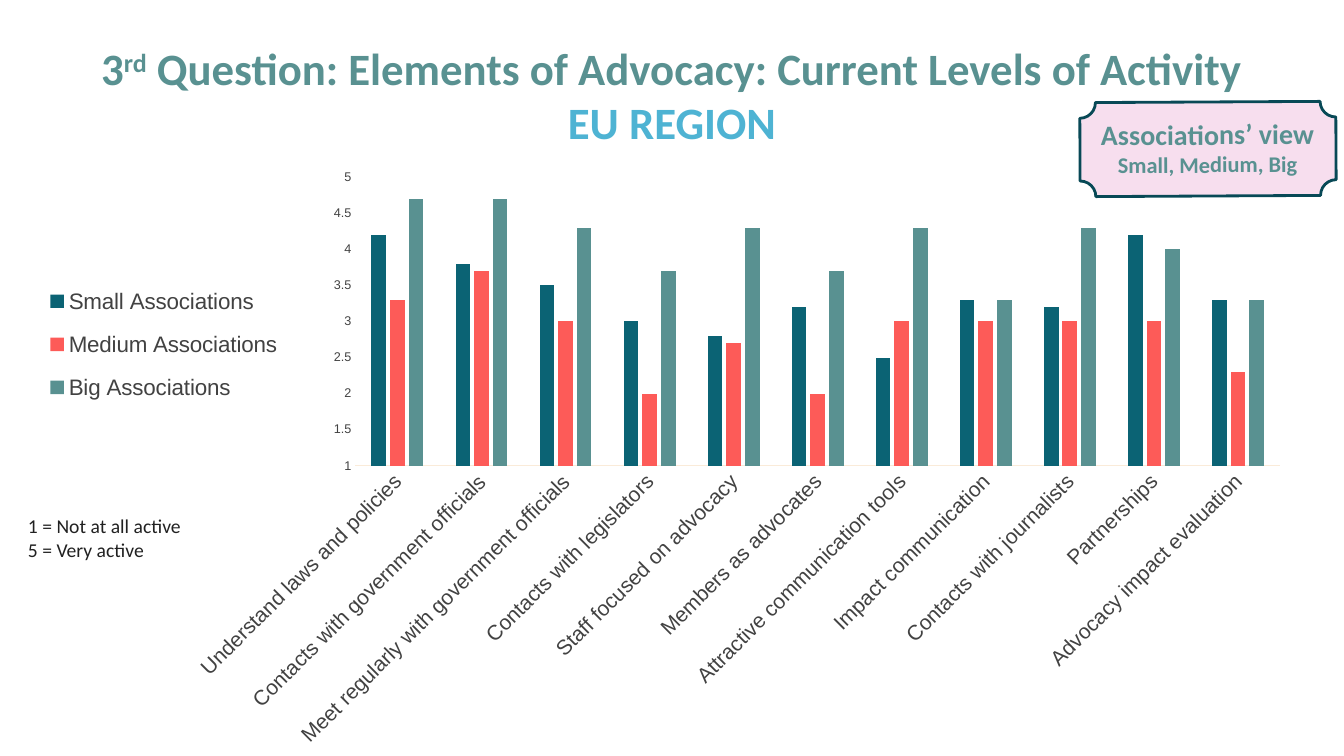
import pptx
import pptx.chart.data
import pptx.dml.color
import pptx.enum.chart
import pptx.enum.shapes
import pptx.enum.text
import pptx.oxml
import pptx.oxml.ns
import pptx.util

RGB = pptx.dml.color.RGBColor
TEAL = RGB(0x59, 0x91, 0x91)
BLUE = RGB(0x4E, 0xB3, 0xD3)
DARK = RGB(0x08, 0x49, 0x56)
PINK = RGB(0xF7, 0xDE, 0xEE)
INK = RGB(0x21, 0x21, 0x21)
GREY = RGB(0x42, 0x42, 0x42)
SAND = RGB(0xFA, 0xEB, 0xD9)
DEEP = RGB(0x0B, 0x63, 0x74)
CORAL = RGB(0xFD, 0x5B, 0x58)

# Content: each line is a list of runs (text, format)
HEAD = {"name": "Calibri", "size": 32, "bold": True, "color": TEAL}
NOTE = {"name": "Calibri", "size": 14, "color": INK}
BADGE = {"name": "Calibri", "size": 20, "bold": True, "color": TEAL}
TITLE = [
    [("3", HEAD), ("rd", HEAD | {"raise": 30000}),
     (" Question: Elements of Advocacy: Current Levels of Activity", HEAD)],
    [("EU REGION", HEAD | {"color": BLUE})],
]
VIEW = [[("Associations’ view", BADGE)],
        [("Small, Medium, Big", BADGE | {"size": 16})]]
KEY = [[("1 = Not at all active", NOTE)], [("5 = Very active", NOTE)]]

ROWS = [
    ("Understand laws and policies", 4.2, 3.3, 4.7),
    ("Contacts with government officials", 3.8, 3.7, 4.7),
    ("Meet regularly with government officials", 3.5, 3, 4.3),
    ("Contacts with legislators", 3, 2, 3.7),
    ("Staff focused on advocacy", 2.8, 2.7, 4.3),
    ("Members as advocates", 3.2, 2, 3.7),
    ("Attractive communication tools", 2.5, 3, 4.3),
    ("Impact communication", 3.3, 3, 3.3),
    ("Contacts with journalists", 3.2, 3, 4.3),
    ("Partnerships", 4.2, 3, 4),
    ("Advocacy impact evaluation", 3.3, 2.3, 3.3),
]
GROUPS = [("Small Associations", DEEP), ("Medium Associations", CORAL),
          ("Big Associations", TEAL)]

# Places in px: left, top, width, height
WIDE, HIGH = 1344, 756
TITLE_BOX = (0, 34, 1344, 75)
CHART_BOX = (3, 136, 1340, 672)
PLAQUE_BOX = (1080, 102, 256, 94)
VIEW_BOX = (1090, 112, 235, 71)
KEY_BOX = (18, 509, 280, 57)
PLOT = (0.263, 0.061, 0.69, 0.43)
LEGEND = (0.02, 0.2, 0.2, 0.22)
TILT = 359.7


def px(num):
    return round(num * 914400 / 100.8)


def area(box):
    return [px(num) for num in box]


def style(font, form):
    for key, val in form.items():
        if key == "color":
            font.color.rgb = val
        elif key == "raise":
            font._element.set("baseline", str(val))
        else:
            setattr(font, key, pptx.util.Pt(val) if key == "size" else val)


def write(shape, lines, align, pad):
    frame = shape.text_frame
    look = {"word_wrap": True, "auto_size": pptx.enum.text.MSO_AUTO_SIZE.NONE,
            "vertical_anchor": pptx.enum.text.MSO_ANCHOR.TOP,
            "margin_left": px(pad[0]), "margin_right": px(pad[0]),
            "margin_top": px(pad[1]), "margin_bottom": px(pad[1])}
    for key, val in look.items():
        setattr(frame, key, val)
    for num, line in enumerate(lines):
        para = frame.add_paragraph() if num else frame.paragraphs[0]
        para.alignment = align
        for text, form in line:
            run = para.add_run()
            run.text = text
            style(run.font, form)


def layout(box, inner=False):
    tags = '<c:layoutTarget val="inner"/>' if inner else ""
    tags += '<c:xMode val="edge"/><c:yMode val="edge"/>'
    tags += "".join(f'<c:{key} val="{val}"/>' for key, val in zip("xywh", box))
    return pptx.oxml.parse_xml(
        f'<c:layout {pptx.oxml.ns.nsdecls("c")}>'
        f"<c:manualLayout>{tags}</c:manualLayout></c:layout>")


def place(part, box, after=None, inner=False):
    for old in part.findall(pptx.oxml.ns.qn("c:layout")):
        part.remove(old)
    spot = 0 if after is None else part.index(after) + 1
    part.insert(spot, layout(box, inner))


def draw_chart(slide):
    data = pptx.chart.data.CategoryChartData()
    names, *cols = zip(*ROWS)
    data.categories = names
    for (name, _), vals in zip(GROUPS, cols):
        data.add_series(name, vals)
    kind = pptx.enum.chart.XL_CHART_TYPE.COLUMN_CLUSTERED
    chart = slide.shapes.add_chart(kind, *area(CHART_BOX), data).chart
    base = {"name": "Arial", "size": 10, "color": GREY}
    chart.has_title = False
    style(chart.font, base)

    # Bars
    plot = chart.plots[0]
    for key, val in {"gap_width": 219, "overlap": -27,
                     "vary_by_categories": False}.items():
        setattr(plot, key, val)
    for bars, (_, color) in zip(plot.series, GROUPS):
        bars.format.fill.solid()
        bars.format.fill.fore_color.rgb = color
    place(chart._chartSpace.chart.plotArea, PLOT, inner=True)

    # Axes
    none = pptx.enum.chart.XL_TICK_MARK.NONE
    across, up = chart.category_axis, chart.value_axis
    for axis, size in ((across, 15), (up, 9)):
        for key, val in {"major_tick_mark": none, "minor_tick_mark": none,
                         "has_major_gridlines": False}.items():
            setattr(axis, key, val)
        style(axis.tick_labels.font, base | {"size": size})
    for key, val in {"minimum_scale": 1, "maximum_scale": 5,
                     "major_unit": 0.5}.items():
        setattr(up, key, val)
    up.format.line.fill.background()
    across.format.line.color.rgb = SAND
    across.format.line.width = pptx.util.Pt(0.75)
    body = across._element.find(".//" + pptx.oxml.ns.qn("a:bodyPr"))
    body.set("rot", "-2700000")
    body.set("vert", "horz")

    # Legend
    chart.has_legend = True
    legend = chart.legend
    legend.position = pptx.enum.chart.XL_LEGEND_POSITION.LEFT
    legend.include_in_layout = False
    style(legend.font, base | {"size": 16})
    part = legend._element
    place(part, LEGEND, part.find(pptx.oxml.ns.qn("c:legendPos")))


def main():
    deck = pptx.Presentation()
    deck.slide_width, deck.slide_height = px(WIDE), px(HIGH)
    slide = deck.slides.add_slide(deck.slide_layouts[5])
    shapes = slide.shapes
    mid = pptx.enum.text.PP_ALIGN.CENTER

    # Title
    title = shapes.title
    for key, val in zip(("left", "top", "width", "height"), area(TITLE_BOX)):
        setattr(title, key, val)
    write(title, TITLE, mid, (13, 7))

    draw_chart(slide)

    # Plaque with its label
    plaque = shapes.add_shape(pptx.enum.shapes.MSO_SHAPE.PLAQUE,
                              *area(PLAQUE_BOX))
    plaque.shadow.inherit = False
    plaque.fill.solid()
    plaque.fill.fore_color.rgb = PINK
    plaque.line.color.rgb = DARK
    plaque.line.width = pptx.util.Pt(2)
    view = shapes.add_textbox(*area(VIEW_BOX))
    write(view, VIEW, mid, (10, 5))
    plaque.rotation = view.rotation = TILT

    # Scale key
    write(shapes.add_textbox(*area(KEY_BOX)), KEY,
          pptx.enum.text.PP_ALIGN.LEFT, (10, 5))
    deck.save("out.pptx")


if __name__ == "__main__":
    main()
